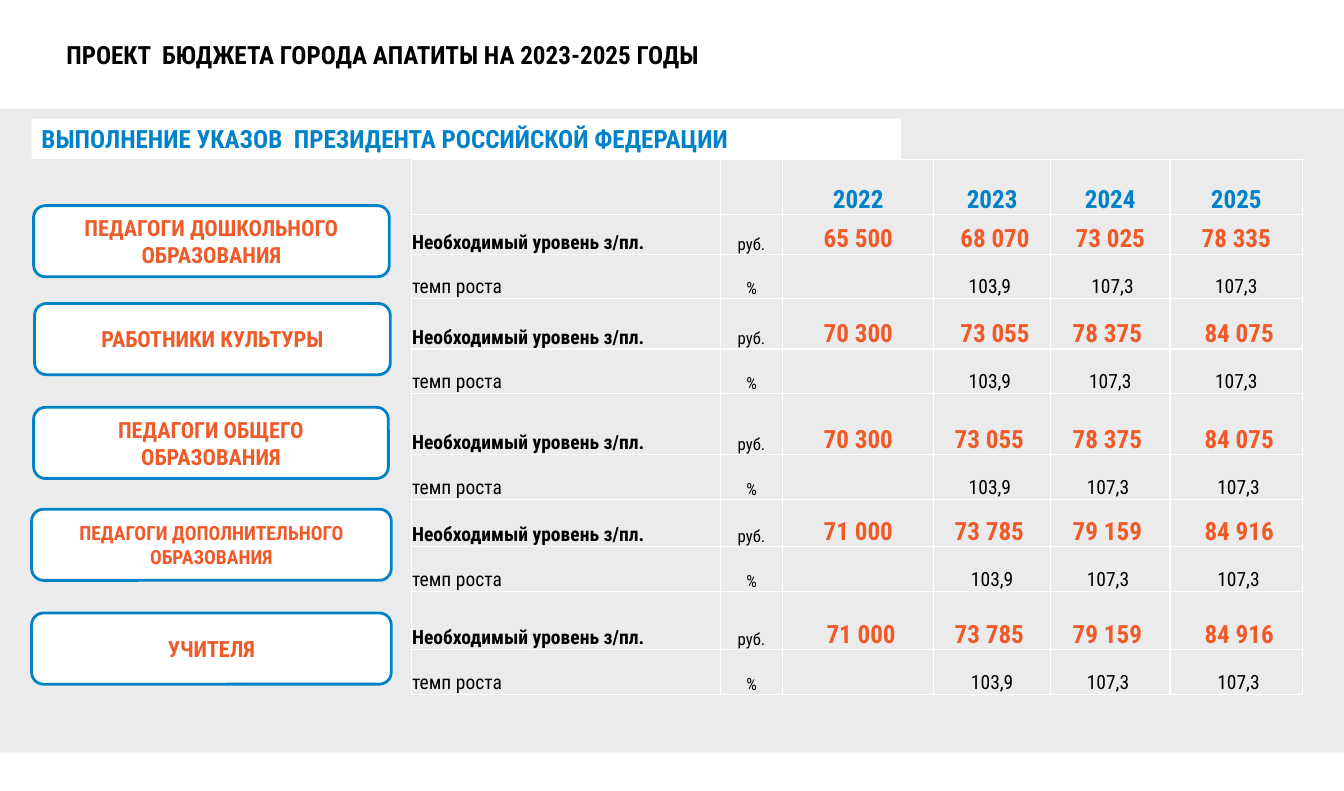
"""Build the slide on pay targets in the 2023-2025 city budget."""
from lxml.etree import SubElement
from pptx import Presentation
from pptx.dml.color import RGBColor
from pptx.enum.shapes import MSO_SHAPE as Shape
from pptx.enum.text import MSO_ANCHOR as Anchor, MSO_AUTO_SIZE as Fit, PP_ALIGN as Align
from pptx.oxml.ns import qn
from pptx.util import Pt

PX = 9000
FONT = "Roboto Condensed"
HEX = {"white": "FFFFFF", "gray": "EBEBEB", "blue": "0082C8",
       "orange": "F05A28", "black": "000000"}


def write(frame, text, size, color, bold=True, align=Align.LEFT):
    frame.text = text
    frame.word_wrap = True
    para = frame.paragraphs[0]
    para.alignment = align
    for run in para.runs:
        run.font.name = FONT
        run.font.size = Pt(size)
        run.font.bold = bold
        run.font.color.rgb = RGBColor.from_string(HEX[color])


def block(kind, box, fill):
    shape = slide.shapes.add_shape(kind, *[n * PX for n in box])
    shape.shadow.inherit = False
    shape.fill.solid()
    shape.fill.fore_color.rgb = RGBColor.from_string(HEX[fill])
    shape.line.fill.background()
    return shape


deck = Presentation()
deck.slide_width, deck.slide_height = 1360 * PX, 800 * PX
slide = deck.slides.add_slide(deck.slide_layouts[5])

title = slide.shapes.title
title.left, title.top, title.width, title.height = [n * PX for n in (57, 35, 912, 41)]
write(title.text_frame, "ПРОЕКТ  БЮДЖЕТА ГОРОДА АПАТИТЫ НА 2023-2025 ГОДЫ", 18, "black")
title.text_frame.vertical_anchor = Anchor.TOP
title.text_frame.auto_size = Fit.NONE

block(Shape.RECTANGLE, (0, 110, 1360, 651), "gray")

cards = [
    ("ПЕДАГОГИ ДОШКОЛЬНОГО ОБРАЗОВАНИЯ", 34, 208, 360, 16),
    ("РАБОТНИКИ КУЛЬТУРЫ", 35, 307, 360, 16),
    ("ПЕДАГОГИ ОБЩЕГО ОБРАЗОВАНИЯ", 34, 412, 359, 16),
    ("ПЕДАГОГИ ДОПОЛНИТЕЛЬНОГО ОБРАЗОВАНИЯ", 32, 515, 364, 14),
    ("УЧИТЕЛЯ", 32, 620, 364, 16),
]
for text, left, top, width, size in cards:
    card = block(Shape.ROUNDED_RECTANGLE, (left, top, width, 72), "white")
    card.line.color.rgb = RGBColor.from_string(HEX["blue"])
    card.line.width = Pt(2)
    write(card.text_frame, text, size, "orange", align=Align.CENTER)
    card.text_frame.vertical_anchor = Anchor.MIDDLE

groups = [
    (40, ["65 500", " 68 070", "73 025", "78 335"], ["103,9 ", " 107,3", "107,3"]),
    (51, ["70 300", " 73 055", "78 375 ", " 84 075"], ["103,9 ", "107,3", "107,3"]),
    (62, ["70 300", "73 055 ", "78 375 ", " 84 075"], ["103,9 ", "107,3 ", " 107,3"]),
    (48, ["71 000", "73 785 ", "79 159 ", " 84 916"], ["103,9", "107,3 ", " 107,3"]),
    (59, [" 71 000", "73 785 ", "79 159 ", " 84 916"], ["103,9", "107,3 ", " 107,3"]),
]
rows = [(56, ["", "", "2022", "2023", "2024", "2025"], "blue", 18, True)]
for high, pay, rate in groups:
    rows.append((high, ["Необходимый уровень з/пл.", "руб.", *pay], "orange", 18, True))
    rows.append((45, ["темп роста", "%", "", *rate], "black", 14, False))

widths = [313, 63, 153, 118, 121, 134]
heights = [row[0] for row in rows]
grid = slide.shapes.add_table(len(rows), len(widths), 416 * PX, 161 * PX,
                              sum(widths) * PX, sum(heights) * PX).table
grid.first_row = grid.horz_banding = False
for col, width in zip(grid.columns, widths):
    col.width = width * PX

for r, (high, texts, color, size, bold) in enumerate(rows):
    grid.rows[r].height = high * PX
    for c, text in enumerate(texts):
        cell = grid.cell(r, c)
        if c == 0:
            write(cell.text_frame, text, 14, "black", bold)
        elif c == 1:
            write(cell.text_frame, text, 12, "black", False, Align.CENTER)
        else:
            write(cell.text_frame, text, size, color, bold, Align.CENTER)
        cell.vertical_anchor = Anchor.BOTTOM
        cell.margin_left = cell.margin_right = cell.margin_top = PX
        cell.margin_bottom = 0
        props = cell._tc.get_or_add_tcPr()
        for side in ("a:lnL", "a:lnR", "a:lnT", "a:lnB"):
            edge = SubElement(props, qn(side), w=str(Pt(1)))
            SubElement(SubElement(edge, qn("a:solidFill")), qn("a:srgbClr"), val=HEX["white"])
        cell.fill.solid()
        cell.fill.fore_color.rgb = RGBColor.from_string(HEX["gray"])

banner = block(Shape.RECTANGLE, (32, 120, 880, 41), "white")
write(banner.text_frame, "ВЫПОЛНЕНИЕ УКАЗОВ  ПРЕЗИДЕНТА РОССИЙСКОЙ ФЕДЕРАЦИИ", 18, "blue")
banner.text_frame.vertical_anchor = Anchor.TOP

deck.save("out.pptx")
